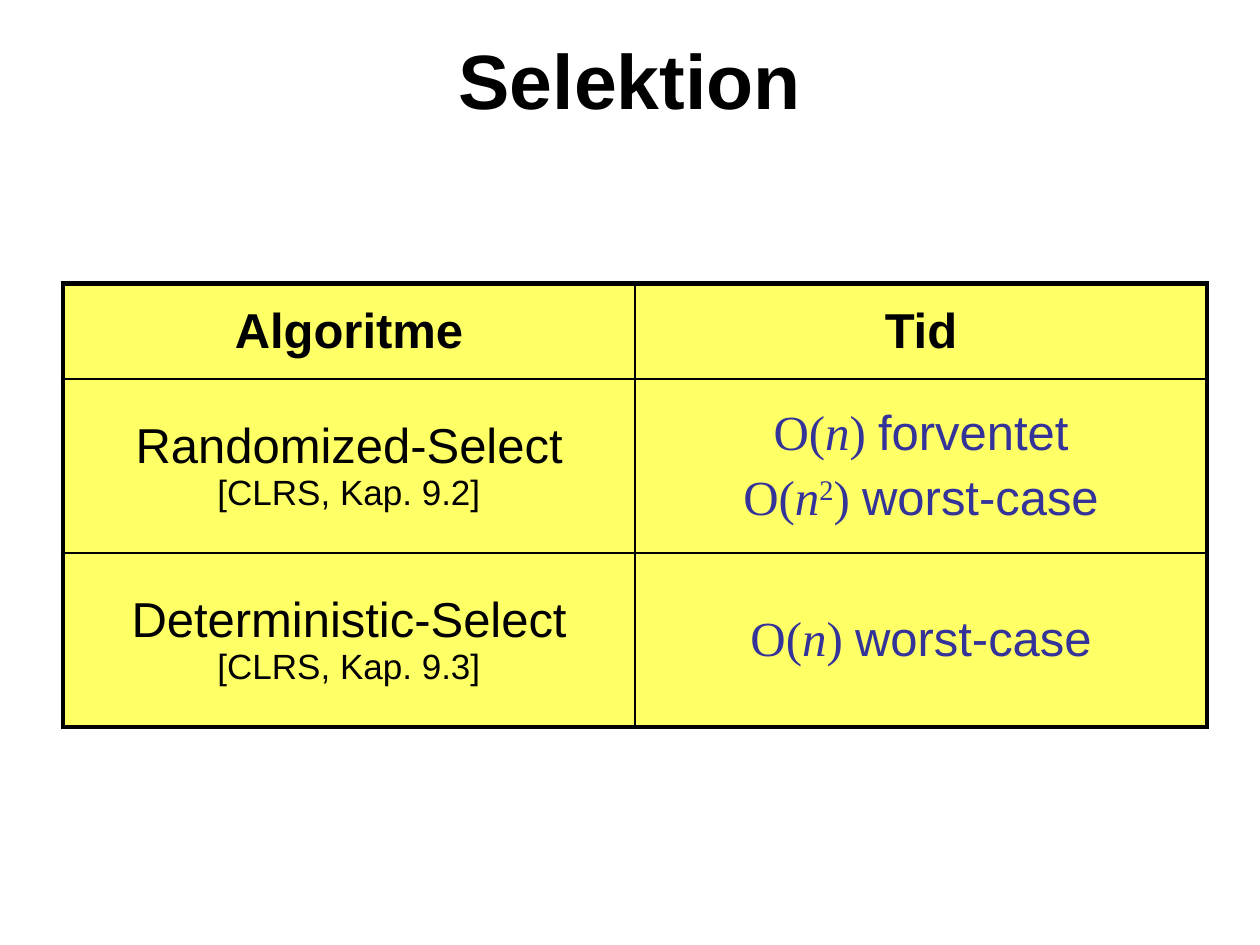
from dataclasses import dataclass

import pptx
from lxml import etree
from pptx.dml.color import RGBColor
from pptx.enum.text import MSO_ANCHOR, PP_ALIGN
from pptx.oxml.ns import qn
from pptx.util import Inches, Pt


@dataclass(frozen=True)
class Theme:
    ink: str = "000000"
    formula: str = "333399"
    cell: str = "FFFF66"
    sans: str = "Arial"
    serif: str = "Times New Roman"
    title_size: int = 44
    body_size: int = 28
    source_size: int = 20
    outer_line: int = 3
    inner_line: int = 1


THEME = Theme()


def style(span, size, color=THEME.ink, font=THEME.sans, bold=False, italic=False):
    span.font.size = Pt(size)
    span.font.name = font
    span.font.bold = bold
    span.font.italic = italic
    span.font.color.rgb = RGBColor.from_string(color)


def add_span(para, text, size=THEME.body_size, **look):
    span = para.add_run()
    span.text = text
    style(span, size, **look)
    return span


def centred_para(cell, index, spaced=False):
    """Return the cell's paragraph at index, with 20% space before if spaced."""
    frame = cell.text_frame
    para = frame.paragraphs[0] if index == 0 else frame.add_paragraph()
    para.alignment = PP_ALIGN.CENTER
    if spaced:
        space = etree.SubElement(para._p.get_or_add_pPr(), qn("a:spcBef"))
        etree.SubElement(space, qn("a:spcPct")).set("val", "20000")
    return para


def write_heading(cell, text):
    add_span(centred_para(cell, 0, spaced=True), text, bold=True)


def write_algorithm(cell, name, source):
    add_span(centred_para(cell, 0), name)
    add_span(centred_para(cell, 1), source, size=THEME.source_size)


def write_bounds(cell, bounds):
    """Write one O(n^power) line for each (power, case) pair."""
    math_look = {"color": THEME.formula, "font": THEME.serif}
    for index, (power, case) in enumerate(bounds):
        para = centred_para(cell, index, spaced=True)
        add_span(para, "O(", **math_look)
        add_span(para, "n", italic=True, **math_look)
        if power:
            exponent = add_span(para, power, **math_look)
            exponent._r.get_or_add_rPr().set("baseline", "30000")
        add_span(para, ") ", **math_look)
        add_span(para, case, color=THEME.formula)


def add_border(cell, side, width):
    line = etree.SubElement(cell._tc.get_or_add_tcPr(), qn(f"a:ln{side}"))
    line.set("w", str(Pt(width)))
    fill = etree.SubElement(line, qn("a:solidFill"))
    etree.SubElement(fill, qn("a:srgbClr")).set("val", THEME.ink)


def add_table(page, left, top, widths, heights):
    """Add a filled grid with a heavy frame and thin inner lines."""
    rows, columns = len(heights), len(widths)
    frame = page.shapes.add_table(rows, columns, Inches(left), Inches(top),
                                  Inches(sum(widths)), Inches(sum(heights)))
    table = frame.table
    table.first_row = table.horz_banding = False
    for column, width in zip(table.columns, widths):
        column.width = Inches(width)
    for row, height in zip(table.rows, heights):
        row.height = Inches(height)
    for r in range(rows):
        for c in range(columns):
            cell = table.cell(r, c)
            cell.vertical_anchor = MSO_ANCHOR.MIDDLE
            outer = {"L": c == 0, "R": c == columns - 1, "T": r == 0, "B": r == rows - 1}
            for side, is_outer in outer.items():
                add_border(cell, side, THEME.outer_line if is_outer else THEME.inner_line)
            cell.fill.solid()
            cell.fill.fore_color.rgb = RGBColor.from_string(THEME.cell)
    return table


def set_title(page, text):
    title = page.shapes.title
    title.left, title.top = Inches(0.5), Inches(0)
    title.width, title.height = Inches(9), Inches(1.25)
    title.text_frame.text = text
    title.text_frame.vertical_anchor = MSO_ANCHOR.MIDDLE
    para = title.text_frame.paragraphs[0]
    para.alignment = PP_ALIGN.CENTER
    style(para.runs[0], THEME.title_size, bold=True)


def main():
    deck = pptx.Presentation()
    deck.slide_width, deck.slide_height = Inches(10), Inches(7.5)
    page = deck.slides.add_slide(deck.slide_layouts.get_by_name("Title Only"))
    set_title(page, "Selektion")

    table = add_table(page, 0.5, 2.25, widths=[4.54] * 2, heights=[0.76, 1.38, 1.38])
    for column, heading in enumerate(["Algoritme", "Tid"]):
        write_heading(table.cell(0, column), heading)
    algorithms = [
        ("Randomized-Select", "[CLRS, Kap. 9.2]", [("", "forventet"), ("2", "worst-case")]),
        ("Deterministic-Select", "[CLRS, Kap. 9.3]", [("", "worst-case")]),
    ]
    for row, (name, source, bounds) in enumerate(algorithms, start=1):
        write_algorithm(table.cell(row, 0), name, source)
        write_bounds(table.cell(row, 1), bounds)

    deck.save("out.pptx")


if __name__ == "__main__":
    main()
